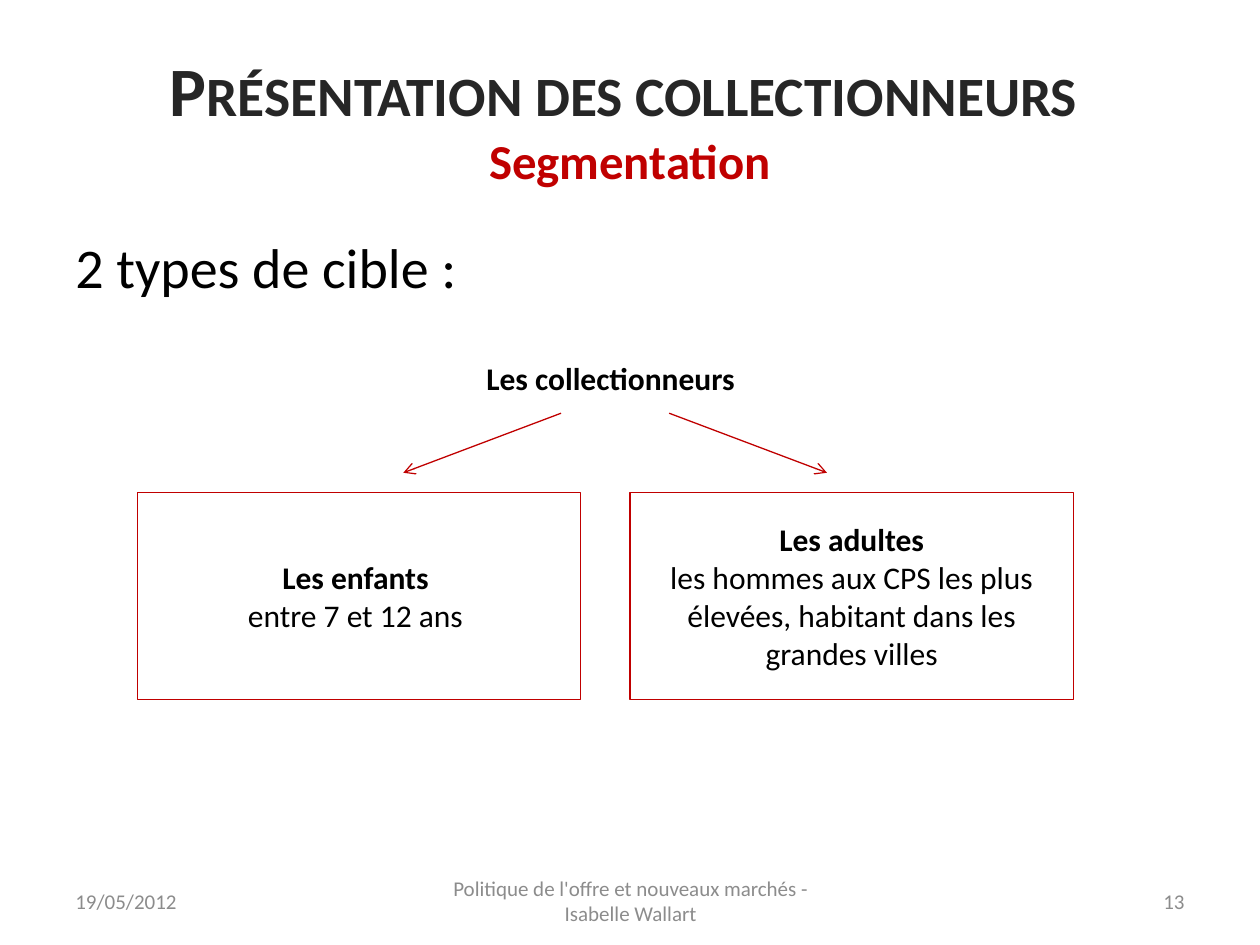
from dataclasses import dataclass

from lxml.etree import SubElement
from pptx import Presentation
from pptx.dml.color import RGBColor
from pptx.enum.shapes import MSO_CONNECTOR, MSO_SHAPE
from pptx.enum.text import MSO_ANCHOR as Anchor, PP_ALIGN as Align
from pptx.oxml.ns import qn
from pptx.util import Cm, Pt

COLORS = {
    "white": "FFFFFF",
    "black": "000000",
    "title": "262626",
    "accent": "C00000",
    "footer": "8C8C8C",
}
FONT = "Calibri"
MARGIN = 1.27
FULL_WIDTH = 22.86


@dataclass
class Area:
    """A rectangle on the slide, in centimetres."""
    left: float
    top: float
    width: float
    height: float

    def lengths(self) -> tuple:
        return Cm(self.left), Cm(self.top), Cm(self.width), Cm(self.height)


@dataclass
class Target:
    left: float
    heading: str
    description: str


@dataclass
class Footer:
    left: float
    width: float
    text: str
    align: Align


TARGETS = [
    Target(2.77, "Les enfants ", "entre 7 et 12 ans "),
    Target(12.7, "Les adultes",
           "les hommes aux CPS les plus élevées, habitant dans les grandes villes"),
]
FOOTERS = [
    Footer(MARGIN, 5.92, "19/05/2012", Align.LEFT),
    Footer(8.69, 8.05, "Politique de l'offre et nouveaux marchés - Isabelle Wallart",
           Align.CENTER),
    Footer(18.21, 5.92, "13", Align.RIGHT),
]


def rgb(name: str) -> RGBColor:
    return RGBColor.from_string(COLORS[name])


def add_span(para, text: str, *, size: float = 18, color: str = "black",
             bold: bool = False, small_caps: bool = False,
             align: Align = Align.CENTER) -> None:
    para.alignment = align
    span = para.add_run()
    span.text = text
    span.font.name = FONT
    span.font.size = Pt(size)
    span.font.bold = bold
    span.font.color.rgb = rgb(color)
    if small_caps:
        span.font._element.set("cap", "small")


def add_text_box(slide, area: Area, anchor: Anchor = Anchor.TOP):
    """Add an empty wrapping text box and return its first paragraph."""
    frame = slide.shapes.add_textbox(*area.lengths()).text_frame
    frame.word_wrap = True
    frame.vertical_anchor = anchor
    return frame.paragraphs[0]


def add_title(slide) -> None:
    para = add_text_box(slide, Area(MARGIN, 0.79, FULL_WIDTH, 3.18), Anchor.MIDDLE)
    add_span(para, "Présentation des collectionneurs ", size=39.6, color="title",
             bold=True, small_caps=True)
    para.add_line_break()
    add_span(para, "Segmentation", size=27.9, color="accent", bold=True)


def add_target(slide, target: Target) -> None:
    area = Area(target.left, 9.93, 8.94, 4.17)
    box = slide.shapes.add_shape(MSO_SHAPE.RECTANGLE, *area.lengths())
    box.shadow.inherit = False
    box.fill.solid()
    box.fill.fore_color.rgb = rgb("white")
    box.line.color.rgb = rgb("accent")
    box.line.width = Pt(0.75)
    frame = box.text_frame
    frame.word_wrap = True
    frame.vertical_anchor = Anchor.MIDDLE
    add_span(frame.paragraphs[0], target.heading, bold=True)
    add_span(frame.add_paragraph(), target.description)


def add_arrow(slide, direction: int) -> None:
    """Draw an arrow down from the label: direction is 1 to the right, -1 to the left."""
    center = 12.4
    arrow = slide.shapes.add_connector(
        MSO_CONNECTOR.STRAIGHT,
        Cm(center + direction * 1.09), Cm(8.33),
        Cm(center + direction * 4.27), Cm(9.53))
    arrow.line.color.rgb = rgb("accent")
    arrow.line.width = Pt(0.75)
    SubElement(arrow.line._get_or_add_ln(), qn("a:tailEnd"), type="arrow")
    SubElement(arrow._element.spPr, qn("a:effectLst"))


def main() -> None:
    deck = Presentation()
    deck.slide_width, deck.slide_height = Cm(25.4), Cm(19.05)
    slide = deck.slides.add_slide(deck.slide_layouts[6])

    add_title(slide)
    intro = add_text_box(slide, Area(MARGIN, 4.57, FULL_WIDTH, 12.57))
    add_span(intro, "2 types de cible :", size=32, align=Align.LEFT)

    label = add_text_box(slide, Area(8.74, 7.11, 7.14, 1.02))
    add_span(label, "Les collectionneurs", bold=True)
    for target in TARGETS:
        add_target(slide, target)
    for direction in (1, -1):
        add_arrow(slide, direction)

    for footer in FOOTERS:
        area = Area(footer.left, 17.65, footer.width, 1.02)
        para = add_text_box(slide, area, Anchor.MIDDLE)
        add_span(para, footer.text, size=12, color="footer", align=footer.align)

    deck.save("out.pptx")


if __name__ == "__main__":
    main()
